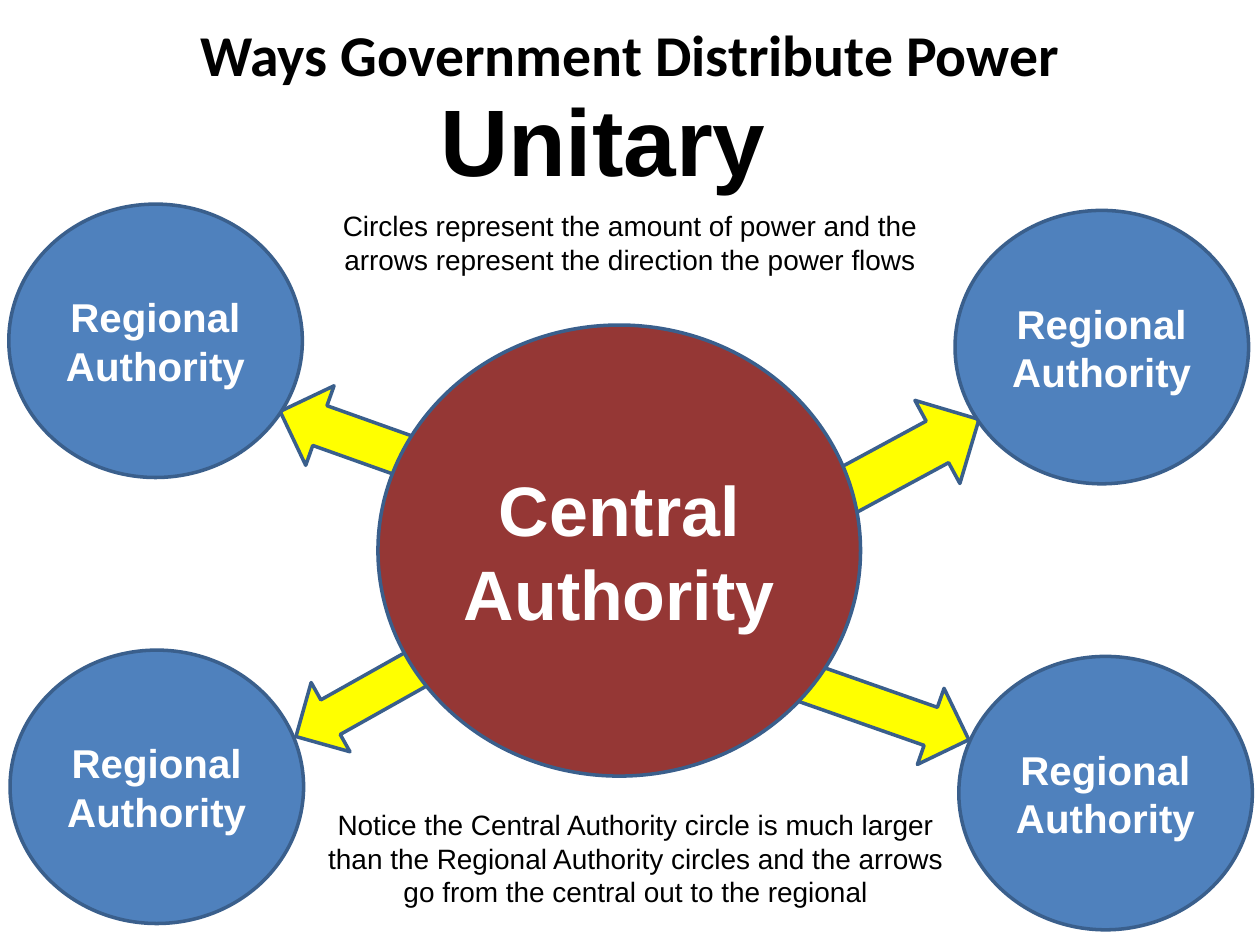
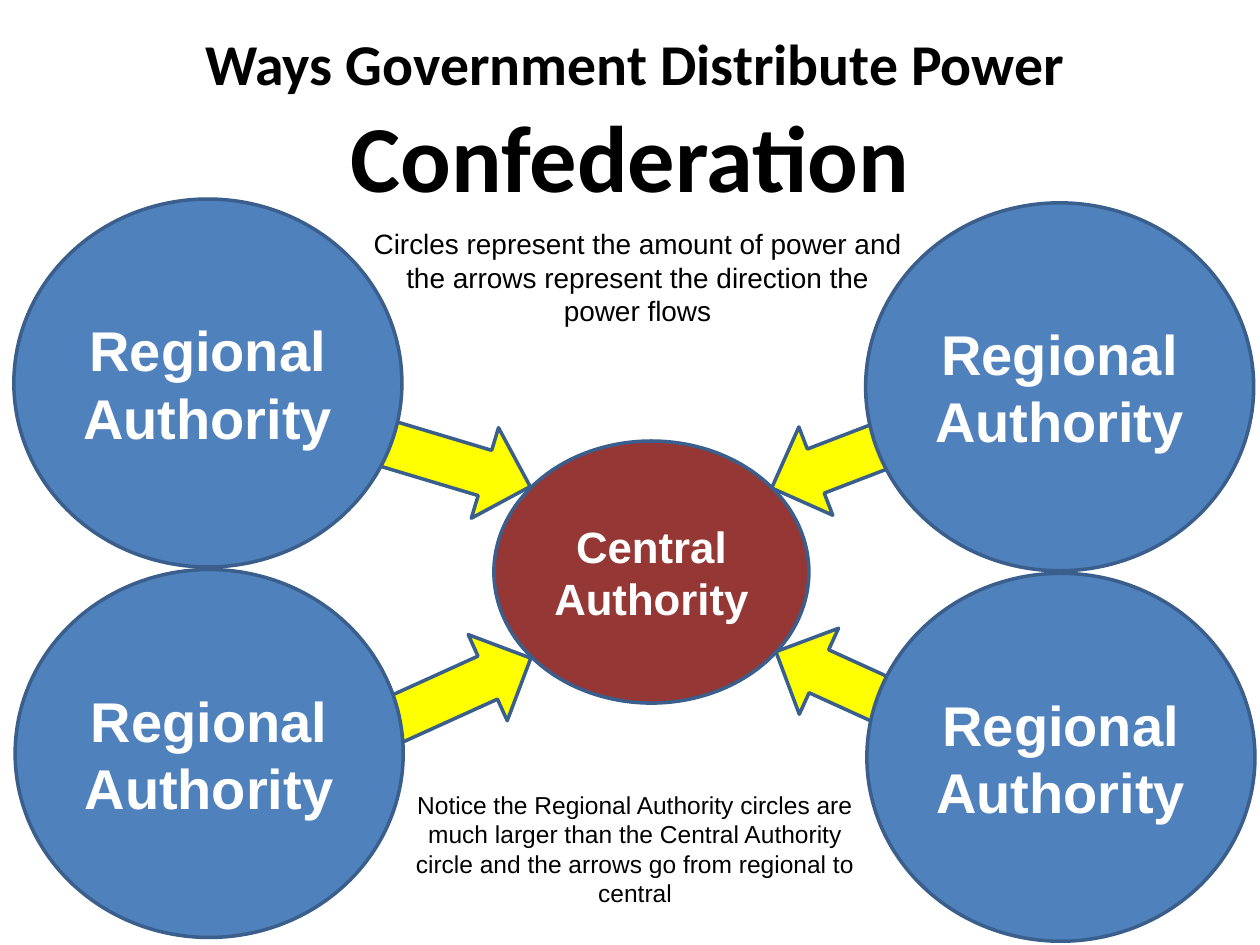
from typing import NamedTuple

from pptx import Presentation
from pptx import util as u
from pptx.dml.color import RGBColor
from pptx.enum import shapes, text

BLACK, WHITE = "000000", "FFFFFF"
REGIONAL_BLUE, CENTRAL_RED = "4F81BD", "953735"
ARROW_YELLOW, OUTLINE = "FFFF00", "3A5F8C"
TITLE = "Ways Government Distribute Power"
LEGEND = ("Circles represent the amount of power and the arrows "
          "represent the direction the power flows")


class Area(NamedTuple):
    left: float
    top: float
    width: float
    height: float

    def lengths(self) -> list[u.Length]:
        return [u.Inches(value) for value in self]


class Style(NamedTuple):
    size: float
    font: str = "Arial"
    bold: bool = False
    color: str = BLACK


class Label(NamedTuple):
    words: str
    area: Area
    style: Style
    margin_top: float = 0.05
    grows: bool = False


class Arrow(NamedTuple):
    area: Area
    rotation: float


class Circles(NamedTuple):
    """Circles of one size that carry the same words."""
    words: str
    color: str
    font_size: float
    width: float
    height: float
    corners: list[tuple[float, float]]


class Diagram(NamedTuple):
    labels: list[Label]
    arrows: list[Arrow]
    central: Circles
    regional: Circles
    notes: list[Label]


def heading(name: str, area: Area, font: str) -> Label:
    return Label(name, area, Style(54, font, True), margin_top=0.1)


def title(left: float, top: float) -> Label:
    return Label(TITLE, Area(left, top, 10, 0.67), Style(33, "Calibri", True))


def note(words: str, area: Area, size: float = 16) -> Label:
    return Label(words, area, Style(size), grows=True)


def central(size: float, area: Area) -> Circles:
    return Circles("Central Authority", CENTRAL_RED, size,
                   area.width, area.height, [(area.left, area.top)])


def regional(size: float, width: float, height: float,
             corners: list[tuple[float, float]]) -> Circles:
    return Circles("Regional Authority", REGIONAL_BLUE, size, width, height, corners)


UNITARY = Diagram(
    labels=[heading("Unitary", Area(2.4, 0.55, 4.77, 0.87), "Arial"), title(0, 0.1)],
    arrows=[
        Arrow(Area(2.18, 3.18, 1.49, 0.67), 199.6),
        Arrow(Area(2.26, 5.19, 1.39, 0.63), 150.7),
        Arrow(Area(6.27, 5.31, 1.46, 0.64), 19.3),
        Arrow(Area(6.52, 3.27, 1.33, 0.75), 331.6),
    ],
    central=central(40, Area(3, 2.58, 3.83, 3.58)),
    regional=regional(23, 2.33, 2.17,
                      [(7.58, 1.67), (7.61, 5.21), (0.07, 1.62), (0.08, 5.16)]),
    notes=[
        note("Notice the Central Authority circle is much larger than the Regional "
             "Authority circles and the arrows go from the central out to the regional",
             Area(2.48, 6.36, 5.13, 0.91)),
        note(LEGEND, Area(2.5, 1.61, 5, 0.64)),
    ],
)

CONFEDERATION = Diagram(
    labels=[heading("Confederation", Area(1.78, 0.68, 6.44, 0.87), "Calibri"),
            title(0.04, 0.17)],
    arrows=[
        Arrow(Area(2.73, 3.27, 1.51, 0.75), 16.7),
        Arrow(Area(2.77, 5.16, 1.51, 0.75), 335.6),
        Arrow(Area(6.09, 5.11, 1.51, 0.75), 204.5),
        Arrow(Area(6.08, 3.26, 1.33, 0.75), 159),
    ],
    central=central(25, Area(3.92, 3.5, 2.5, 2.08)),
    regional=regional(32, 3.08, 2.92,
                      [(6.87, 1.61), (6.88, 4.55), (0.11, 1.58), (0.12, 4.52)]),
    notes=[
        note("Notice the Regional Authority circles are much larger than the Central "
             "Authority circle and the arrows go from regional to central",
             Area(3.14, 6.22, 3.8, 1.04), 14),
        note(LEGEND, Area(2.85, 1.75, 4.42, 0.91)),
    ],
)


def rgb(color: str) -> RGBColor:
    return RGBColor.from_string(color)


def write(frame, words: str, style: Style) -> None:
    frame.word_wrap = True
    para = frame.paragraphs[0]
    para.text = words
    para.alignment = text.PP_ALIGN.CENTER
    para.font.size = u.Pt(style.size)
    para.font.name = style.font
    para.font.bold = style.bold
    para.font.color.rgb = rgb(style.color)


def draw_label(page, label: Label) -> None:
    frame = page.shapes.add_textbox(*label.area.lengths()).text_frame
    write(frame, label.words, label.style)
    frame.margin_top = u.Inches(label.margin_top)
    if label.grows:
        frame.auto_size = text.MSO_AUTO_SIZE.SHAPE_TO_FIT_TEXT


def draw_outlined(group, kind: shapes.MSO_SHAPE, area: Area, color: str):
    shape = group.shapes.add_shape(kind, *area.lengths())
    shape.shadow.inherit = False
    shape.fill.solid()
    shape.fill.fore_color.rgb = rgb(color)
    shape.line.color.rgb = rgb(OUTLINE)
    shape.line.width = u.Pt(2)
    return shape


def draw_circles(group, circles: Circles) -> None:
    for left, top in circles.corners:
        area = Area(left, top, circles.width, circles.height)
        circle = draw_outlined(group, shapes.MSO_SHAPE.OVAL, area, circles.color)
        frame = circle.text_frame
        frame.margin_left = frame.margin_right = u.Inches(0.05)
        frame.vertical_anchor = text.MSO_ANCHOR.MIDDLE
        write(frame, circles.words, Style(circles.font_size, bold=True, color=WHITE))


def draw_diagram(deck, diagram: Diagram) -> None:
    page = deck.slides.add_slide(deck.slide_layouts[6])
    for label in diagram.labels:
        draw_label(page, label)
    group = page.shapes.add_group_shape()
    for arrow in diagram.arrows:
        shape = draw_outlined(group, shapes.MSO_SHAPE.RIGHT_ARROW, arrow.area, ARROW_YELLOW)
        shape.rotation = arrow.rotation
    draw_circles(group, diagram.central)
    draw_circles(group, diagram.regional)
    for label in diagram.notes:
        draw_label(page, label)


def main() -> None:
    deck = Presentation()
    deck.slide_width, deck.slide_height = u.Inches(10), u.Inches(7.5)
    for diagram in (UNITARY, CONFEDERATION):
        draw_diagram(deck, diagram)
    deck.save("out.pptx")


if __name__ == "__main__":
    main()
